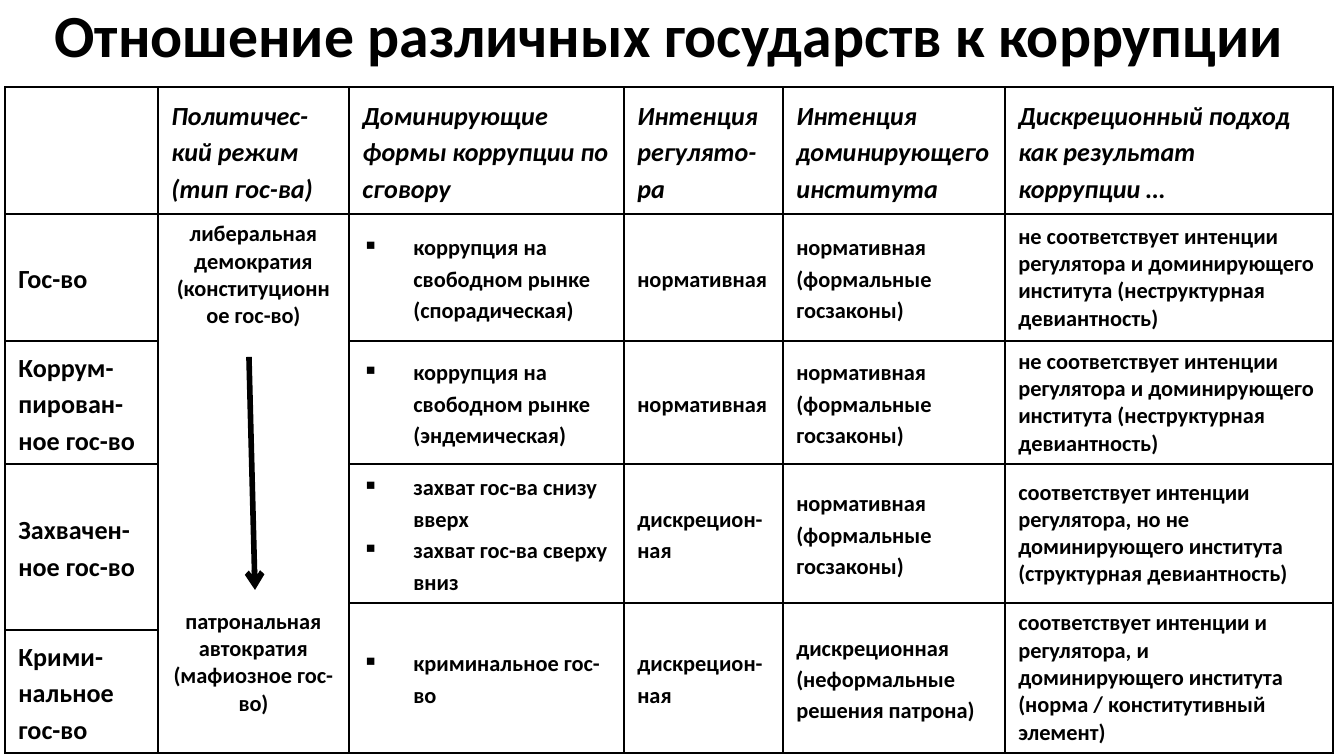
from lxml import etree
from pptx import Presentation
from pptx.dml.color import RGBColor
from pptx.enum.shapes import MSO_CONNECTOR
from pptx.enum.text import MSO_ANCHOR, PP_ALIGN
from pptx.oxml.ns import qn
from pptx.util import Pt

MID, TOP = MSO_ANCHOR.MIDDLE, MSO_ANCHOR.TOP
LEFT, CENTER = PP_ALIGN.LEFT, PP_ALIGN.CENTER
STRAIGHT = MSO_CONNECTOR.STRAIGHT

COLORS = {"ink": "000000", "paper": "FFFFFF"}
FONT = "Calibri"
TITLE = "Отношение различных государств к коррупции"
HEADS = ["", "Политичес-кий режим (тип гос-ва)",
         "Дoминирующие формы коррупции по сговору",
         "Интенция регулято-ра", "Интенция доминирующего института",
         "Дискреционный подход как результат коррупции …"]
REGIMES = ["либеральнaя дeмократия", "(конституционное гос-во)",
           "патрональная aвтократия", "(мaфиозное гос-во)"]
NORM = "нормативная (формальные госзаконы)"
AGAINST = ("не соответствует интенции регулятора и доминирующего "
           "института (неструктурная дeвиaнтнoсть)")
# Grid row of the name, grid row of the rest, name, forms, regulator,
# institution, result
STATES = [
    (1, 1, "Гос-во", ["коррупция на свободном рынке (спорадическая)"],
     "нормативная", NORM, AGAINST),
    (2, 2, "Коррум-пирован-ное гос-во",
     ["коррупция на свободном рынке (эндемическая)"],
     "нормативная", NORM, AGAINST),
    (3, 3, "Захвачен-ное гос-во",
     ["захват гос-ва снизу вверх", "захват гос-ва сверху вниз"],
     "дискрецион-ная", NORM,
     "соответствует интенции регулятора, но не доминирующего института "
     "(структурная дeвиaнтнoсть)"),
    (5, 4, "Крими-нальное гос-во", ["криминальное гос-во"],
     "дискрецион-ная", "дискреционная (неформальные решения патрона)",
     "соответствует интенции и регулятора, и доминирующего института "
     "(норма / конститутивный элемент)"),
]
# Top row, bottom row, column
MERGES = [(1, 5, 1), (3, 4, 0)] + [(4, 5, col) for col in range(2, 6)]

WIDTHS = [153, 191, 275, 159, 222, 328]
HEIGHTS = [127, 127, 123, 139, 27, 123]
TABLE_AT = (5, 87)
TITLE_BOX = (-5, 8, 1349, 52)
ARROW = (249, 357, 255, 590)
INDENT = 51
REGIME_GAP = Pt(149)

HEAD = {"size": Pt(14), "bold": True, "italic": True}
NAME = {"size": Pt(14), "bold": True}
BODY = {"size": Pt(12), "bold": True}
BIG = {"size": Pt(32), "bold": True}


def px(num):
    return round(num * 914400 / 134.4)


def rgb(name):
    return RGBColor.from_string(COLORS[name])


def write(frame, lines, style, align=LEFT, space=1.0):
    """Fill the frame with one paragraph per line."""
    frame.word_wrap = True
    for i, line in enumerate(lines):
        para = frame.paragraphs[0] if i == 0 else frame.add_paragraph()
        para.alignment, para.line_spacing = align, space
        run = para.add_run()
        run.text = line
        run.font.color.rgb = rgb("ink")
        for key, val in {"name": FONT, **style}.items():
            setattr(run.font, key, val)


def put(cell, lines, style, align=LEFT, space=1.15, anchor=MID):
    cell.vertical_anchor = anchor
    write(cell.text_frame, lines, style, align, space)


def bullet(para):
    props = para._p.get_or_add_pPr()
    props.set("marL", str(px(INDENT)))
    props.set("indent", str(-px(INDENT)))
    etree.SubElement(props, qn("a:buChar")).set("char", "▪")


def border(cell):
    props = cell._tc.get_or_add_tcPr()
    for side in ("lnL", "lnR", "lnT", "lnB"):
        line = etree.SubElement(props, qn("a:" + side), w=str(Pt(1)))
        fill = etree.SubElement(line, qn("a:solidFill"))
        etree.SubElement(fill, qn("a:srgbClr"), val=COLORS["ink"])


def add_grid(slide):
    size = (sum(WIDTHS), sum(HEIGHTS))
    table = slide.shapes.add_table(
        len(HEIGHTS), len(WIDTHS), *map(px, TABLE_AT + size)).table
    table.first_row = table.horz_banding = False
    for col, width in zip(table.columns, WIDTHS):
        col.width = px(width)
    for row, height in zip(table.rows, HEIGHTS):
        row.height = px(height)
    for cell in table.iter_cells():
        border(cell)
        cell.fill.background()
    for top, end, col in MERGES:
        table.cell(top, col).merge(table.cell(end, col))
    return table


def fill_grid(table):
    for col, head in enumerate(HEADS):
        if head:
            put(table.cell(0, col), [head], HEAD)
    regime = table.cell(1, 1)
    put(regime, REGIMES, BODY, CENTER, 1.0, TOP)
    regime.text_frame.paragraphs[2].space_before = REGIME_GAP
    for low, row, name, forms, *rest, result in STATES:
        put(table.cell(low, 0), [name], NAME)
        cell = table.cell(row, 2)
        put(cell, forms, BODY)
        for para in cell.text_frame.paragraphs:
            bullet(para)
        for col, text in enumerate(rest, 3):
            put(table.cell(row, col), [text], BODY)
        put(table.cell(row, 5), [result], BODY, space=1.0)


def add_arrow(slide):
    arrow = slide.shapes.add_connector(STRAIGHT, *map(px, ARROW))
    arrow.line.color.rgb = rgb("ink")
    arrow.line.width = Pt(3)
    etree.SubElement(arrow.line._get_or_add_ln(), qn("a:tailEnd"), type="arrow")
    etree.SubElement(arrow._element.spPr, qn("a:effectLst"))


def main():
    prs = Presentation()
    prs.slide_width, prs.slide_height = px(1344), px(756)
    slide = prs.slides.add_slide(prs.slide_layouts[6])
    slide.background.fill.solid()
    slide.background.fill.fore_color.rgb = rgb("paper")
    title = slide.shapes.add_textbox(*map(px, TITLE_BOX)).text_frame
    title.vertical_anchor = MID
    write(title, [TITLE], BIG, CENTER)
    fill_grid(add_grid(slide))
    add_arrow(slide)
    prs.save("out.pptx")


if __name__ == "__main__":
    main()
